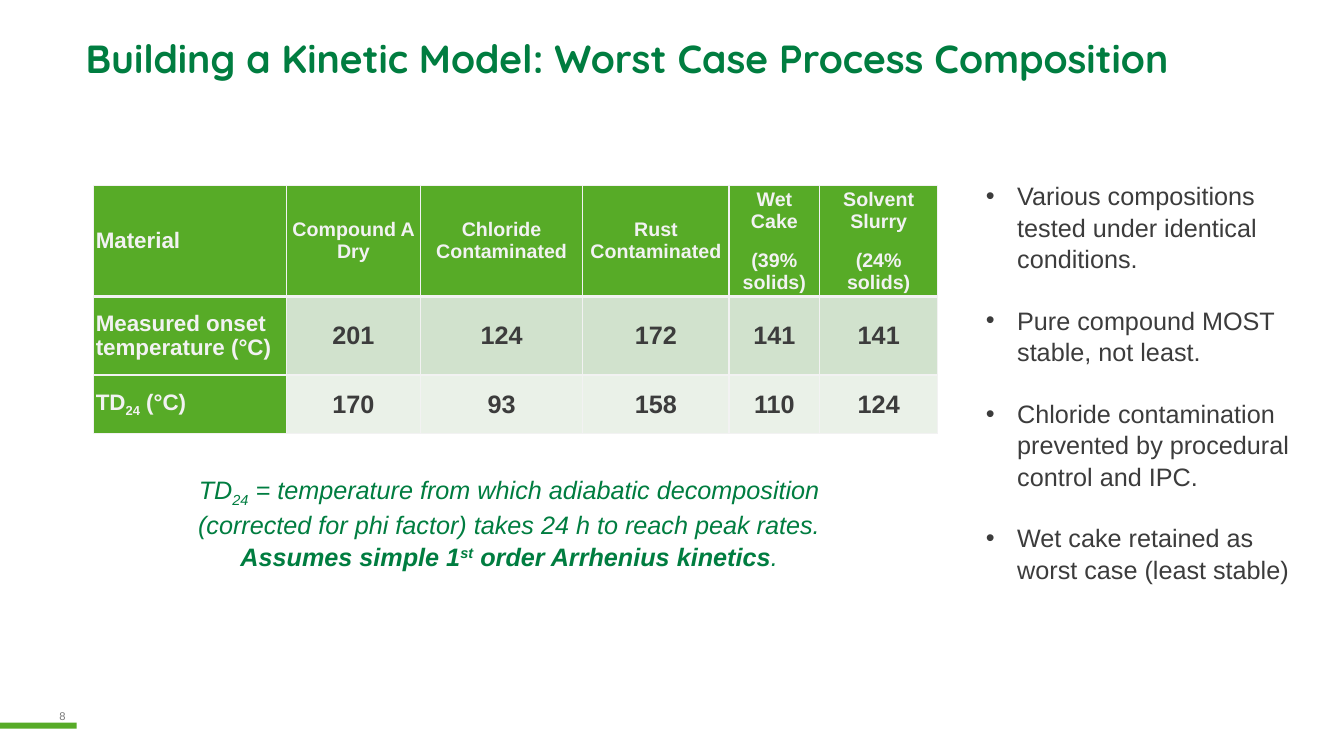
"""Build the slide on the worst case process composition."""
from dataclasses import dataclass, replace

from lxml.etree import SubElement
from pptx import Presentation
from pptx.dml.color import RGBColor
from pptx.enum.shapes import MSO_SHAPE
from pptx.enum.text import MSO_ANCHOR, PP_ALIGN
from pptx.oxml.ns import qn
from pptx.slide import Slide
from pptx.table import _Cell as Cell
from pptx.text.text import TextFrame, _Paragraph as Para
from pptx.util import Inches, Pt

WIDE, HIGH = Inches(13.33), Inches(7.5)
GREEN = RGBColor(0x57, 0xAB, 0x27)
DEEP = RGBColor(0x00, 0x7D, 0x40)
DARK = RGBColor(0x3C, 0x3C, 0x3C)
GREY = RGBColor(0x79, 0x79, 0x79)
PALE = RGBColor(0xF2, 0xF2, 0xF2)
BANDS = (RGBColor(0xD1, 0xE2, 0xCD), RGBColor(0xEA, 0xF1, 0xE8))


@dataclass(frozen=True)
class Look:
    size: int
    color: RGBColor
    bold: bool = False
    slant: bool = False
    font: str = "Arial"
    shift: int = 0


@dataclass(frozen=True)
class Piece:
    text: str
    look: Look


@dataclass(frozen=True)
class Line:
    words: tuple[Piece, ...]
    align: PP_ALIGN = PP_ALIGN.CENTER
    before: float = 0
    after: float = 0
    space: float = 1.0
    dot: bool = False


@dataclass(frozen=True)
class Box:
    left: float
    top: float
    width: float
    height: float

    def place(self) -> tuple[int, int, int, int]:
        return across(self.left), down(self.top), across(self.width), down(self.height)


def across(share: float) -> int:
    return round(WIDE * share / 100)


def down(share: float) -> int:
    return round(HIGH * share / 100)


HEAD = Look(28, DEEP, bold=True, font="Quicksand")
BODY = Look(18, DARK)
NOTE = Look(18, DEEP, slant=True)
STRONG = replace(NOTE, bold=True)
LABEL = Look(16, PALE, bold=True)
TOP = replace(LABEL, size=14)
VALUE = replace(BODY, bold=True)

COLS = (14.33, 9.98, 12.08, 10.88, 6.75, 8.78)
ROWS = (14.67, 10.4, 7.73)
GRID = Box(6.98, 24.53, sum(COLS), sum(ROWS))

HEADS = (("Compound A Dry",), ("Chloride Contaminated",), ("Rust Contaminated",),
         ("Wet Cake", "(39% solids)"), ("Solvent Slurry", "(24% solids)"))
NAMES = (
    (Piece("Material", LABEL),),
    (Piece("Measured onset temperature (°C)", LABEL),),
    (Piece("TD", LABEL), Piece("24", replace(LABEL, shift=-25)), Piece(" (°C)", LABEL)),
)
DATA = ((201, 124, 172, 141, 141), (170, 93, 158, 110, 124))
POINTS = (
    "Various compositions tested under identical conditions.",
    "Pure compound MOST stable, not least.",
    "Chloride contamination prevented by procedural control and IPC.",
    "Wet cake retained as worst case (least stable)",
)
NOTES = (
    (Piece("TD", NOTE), Piece("24", replace(NOTE, shift=-25)),
     Piece(" = temperature from which adiabatic decomposition (corrected for phi factor)"
           " takes 24 h to reach peak rates.", NOTE)),
    (Piece("Assumes simple 1", STRONG), Piece("st", replace(STRONG, shift=30)),
     Piece(" order Arrhenius kinetics", STRONG), Piece(".", NOTE)),
)


def add_dot(para: Para) -> None:
    props = para._p.get_or_add_pPr()
    props.set("marL", str(Inches(0.31)))
    props.set("indent", str(-Inches(0.31)))
    SubElement(props, qn("a:buFont")).set("typeface", "Arial")
    SubElement(props, qn("a:buChar")).set("char", "•")


def write(frame: TextFrame, lines: list[Line]) -> None:
    for index, line in enumerate(lines):
        para = frame.add_paragraph() if index else frame.paragraphs[0]
        if line.dot:
            add_dot(para)
        para.alignment = line.align
        para.line_spacing = line.space
        para.space_before = Pt(line.before if index else 0)
        para.space_after = Pt(line.after)
        for piece in line.words:
            run, look = para.add_run(), piece.look
            run.text = piece.text
            run.font.name, run.font.size = look.font, Pt(look.size)
            run.font.bold, run.font.italic = look.bold, look.slant
            run.font.color.rgb = look.color
            if look.shift:
                run._r.get_or_add_rPr().set("baseline", str(look.shift * 1000))


def add_text(slide: Slide, box: Box, lines: list[Line], wrap: bool = True,
             anchor: MSO_ANCHOR = MSO_ANCHOR.TOP) -> None:
    frame = slide.shapes.add_textbox(*box.place()).text_frame
    frame.word_wrap, frame.vertical_anchor = wrap, anchor
    write(frame, lines)


def edge(cell: Cell, sides: dict[str, int]) -> None:
    props = cell._tc.get_or_add_tcPr()
    for index, (side, width) in enumerate(sides.items()):
        rule = props.makeelement(qn(f"a:ln{side}"), {"w": str(Pt(width))})
        fill = SubElement(rule, qn("a:solidFill"))
        SubElement(fill, qn("a:srgbClr")).set("val", str(PALE))
        props.insert(index, rule)


def cell_lines(row: int, col: int) -> list[Line]:
    if col == 0:
        return [Line(NAMES[row], PP_ALIGN.LEFT)]
    if row == 0:
        texts = HEADS[col - 1]
        return [Line((Piece(text, TOP),), before=6, after=6 if text != texts[-1] else 0)
                for text in texts]
    return [Line((Piece(str(DATA[row - 1][col - 1]), VALUE),))]


def add_grid(slide: Slide) -> None:
    table = slide.shapes.add_table(len(ROWS), len(COLS), *GRID.place()).table
    for col, share in enumerate(COLS):
        table.columns[col].width = across(share)
    for row, share in enumerate(ROWS):
        table.rows[row].height = down(share)
        for col in range(len(COLS)):
            cell = table.cell(row, col)
            cell.margin_left = cell.margin_right = Inches(0.02)
            cell.margin_top = cell.margin_bottom = 0
            cell.vertical_anchor = MSO_ANCHOR.MIDDLE
            cell.fill.solid()
            cell.fill.fore_color.rgb = BANDS[row - 1] if row and col else GREEN
            edge(cell, {"L": 1, "R": 1, "T": 3 if row == 1 else 1, "B": 1 if row else 3})
            write(cell.text_frame, cell_lines(row, col))


def add_bar(slide: Slide) -> None:
    bar = slide.shapes.add_shape(MSO_SHAPE.RECTANGLE, *Box(0, 95.6, 5.7, 0.8).place())
    bar.shadow.inherit = False
    bar.fill.solid()
    bar.fill.fore_color.rgb = GREEN
    bar.line.fill.background()


def main() -> None:
    deck = Presentation()
    deck.slide_width, deck.slide_height = WIDE, HIGH
    slide = deck.slides.add_slide(deck.slide_layouts[6])
    add_text(slide, Box(3.08, 93.2, 3.15, 3.2), [Line((Piece("8", Look(8, GREY)),))], wrap=False)
    add_bar(slide)
    title = Piece("Building a Kinetic Model: Worst Case Process Composition", HEAD)
    add_text(slide, Box(5.63, 4.4, 87.1, 7.33),
             [Line((title,), PP_ALIGN.LEFT, space=0.9)], anchor=MSO_ANCHOR.MIDDLE)
    add_text(slide, Box(72.62, 23.07, 24.53, 53.87),
             [Line((Piece(text, BODY),), PP_ALIGN.LEFT, before=21.6, space=1.04, dot=True)
              for text in POINTS])
    add_grid(slide)
    add_text(slide, Box(10.5, 61.87, 54.76, 13.47), [Line(words, space=1.04) for words in NOTES])
    deck.save("out.pptx")


if __name__ == "__main__":
    main()
